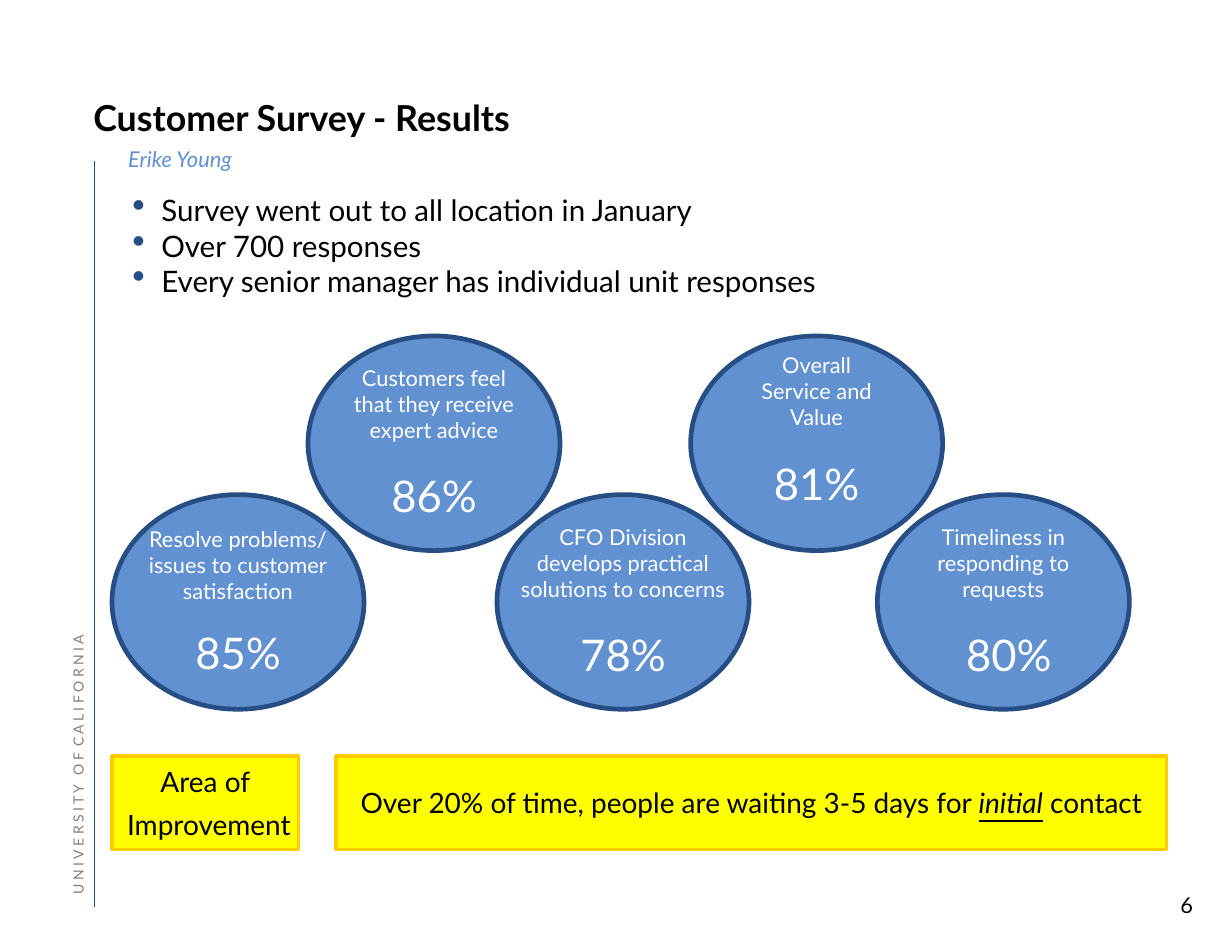
from lxml import etree
from pptx import Presentation
from pptx import util as u
from pptx.dml.color import RGBColor
from pptx.enum import shapes, text
from pptx.oxml.ns import qn

COLORS = {"blue": "6191D1", "navy": "264E84", "yellow": "FFFF00", "gold": "FFCC00",
          "gray": "808080", "black": "000000", "white": "FFFFFF"}
UNIT = 1 / 12  # the grid has twelve columns and rows to the inch
LEFT, CENTER, RIGHT = text.PP_ALIGN.LEFT, text.PP_ALIGN.CENTER, text.PP_ALIGN.RIGHT
TOP, MIDDLE, BOTTOM = text.MSO_ANCHOR.TOP, text.MSO_ANCHOR.MIDDLE, text.MSO_ANCHOR.BOTTOM


def grid(value):
    return u.Inches(value * UNIT)


def color(name):
    return RGBColor.from_string(COLORS[name])


class SlideBuilder:
    font_name = "Lato"
    inset = 0.05

    def __init__(self, slide):
        self.slide = slide

    def frame(self, shape, anchor=TOP, insets=None, wrap=True, grow=False):
        frame = shape.text_frame
        frame.word_wrap = wrap
        frame.vertical_anchor = anchor
        frame.auto_size = (text.MSO_AUTO_SIZE.SHAPE_TO_FIT_TEXT if grow
                           else text.MSO_AUTO_SIZE.NONE)
        if insets is not None:
            for side, value in zip(("left", "top", "right", "bottom"), insets):
                setattr(frame, f"margin_{side}", u.Inches(value))
        return frame

    def paragraph(self, frame, runs, size, ink="black", bullet=False,
                  line_spacing=None, space_before=None, align=LEFT):
        """Add one paragraph; runs are (words, font values, tracking)."""
        first = frame.paragraphs[0]
        paragraph = first if not first.runs else frame.add_paragraph()
        if bullet:
            self.bullet(paragraph)
        formats = {"alignment": align, "space_before": space_before,
                   "line_spacing": line_spacing}
        for name, value in formats.items():
            if value is not None:
                setattr(paragraph, name, value)
        if isinstance(runs, str):
            runs = [(runs, {}, 0)]
        for words, extra, tracking in runs:
            run = paragraph.add_run()
            run.text = words
            values = {"name": self.font_name, "size": u.Pt(size), **extra}
            for name, value in values.items():
                setattr(run.font, name, value)
            run.font.color.rgb = color(ink)
            if tracking:
                run.font._element.set("spc", str(tracking))

    def bullet(self, paragraph):
        properties = paragraph._p.get_or_add_pPr()
        properties.set("marL", str(u.Inches(0.26)))
        properties.set("indent", str(-u.Inches(0.26)))
        bullet_color = etree.SubElement(properties, qn("a:buClr"))
        etree.SubElement(bullet_color, qn("a:srgbClr"), val=COLORS["navy"])
        etree.SubElement(properties, qn("a:buSzPct"), val="125000")
        etree.SubElement(properties, qn("a:buChar"), char="•")

    def text_box(self, place, paragraphs, size, rotation=0, anchor=TOP,
                 insets=None, wrap=True, grow=False, **formats):
        shape = self.slide.shapes.add_textbox(*map(grid, place))
        shape.rotation = rotation
        frame = self.frame(shape, anchor, insets, wrap, grow)
        for runs in paragraphs:
            self.paragraph(frame, runs, size, **formats)

    def panel(self, kind, place, fill, line, width, wrap=True, bottom=inset):
        shape = self.slide.shapes.add_shape(kind, *map(grid, place))
        shape.shadow.inherit = False
        shape.fill.solid()
        shape.fill.fore_color.rgb = color(fill)
        shape.line.color.rgb = color(line)
        shape.line.width = u.Pt(width)
        insets = (self.inset, self.inset, self.inset, bottom)
        return self.frame(shape, MIDDLE, insets, wrap)

    def score(self, column, row, lines, percent, gap=16.8, bottom=inset):
        frame = self.panel(shapes.MSO_SHAPE.OVAL, (column, row, 27, 23),
                           "blue", "navy", 3, wrap=False, bottom=bottom)
        for line in lines:
            self.paragraph(frame, line, 14, "white", align=CENTER)
        self.paragraph(frame, percent, 28, "white", align=CENTER,
                       space_before=u.Pt(gap))

    def callout(self, column, width, paragraphs):
        frame = self.panel(shapes.MSO_SHAPE.RECTANGLE, (column, 81, width, 10),
                           "yellow", "gold", 2)
        for index, runs in enumerate(paragraphs):
            self.paragraph(frame, runs, 18, align=CENTER,
                           space_before=u.Pt(6) if index else None)

    def rule(self, column, top, bottom):
        line = self.slide.shapes.add_connector(
            shapes.MSO_CONNECTOR.STRAIGHT,
            *map(grid, (column, top, column, bottom)))
        line.line.color.rgb = color("navy")
        line.line.width = u.Pt(0.35)
        etree.SubElement(line._element.spPr, qn("a:effectLst"))


def main():
    presentation = Presentation()
    presentation.slide_width = u.Inches(11)
    presentation.slide_height = u.Inches(8.5)
    builder = SlideBuilder(presentation.slides.add_slide(presentation.slide_layouts[6]))
    flush = (0, 0, 0, 0)

    # Side rule, page number and university name
    builder.rule(10.1, 17.3, 97.2)
    builder.text_box((123, 95, 6, 4), ["6"], 14, grow=True, align=RIGHT)
    university = [(" ".join("UNIVERSITY"), {}, 0), (" ", {}, 350),
                  (" ".join("OF"), {}, 0), (" ", {}, 175),
                  (" ".join("CALIFORNIA"), {}, 0)]
    builder.text_box((-17.65, 68.9, 52, 1.8), [university], 9, rotation=270,
                     anchor=BOTTOM, insets=flush, wrap=False, ink="gray",
                     line_spacing=u.Pt(12))

    # Title and presenter
    builder.text_box((10, 11, 57, 3.85), [[("Customer Survey - Results", {"bold": True}, 0)]],
                     23, anchor=BOTTOM, insets=flush, line_spacing=u.Pt(27.9))
    builder.text_box((12, 15, 14.6, 4.1), [[("Erike Young", {"italic": True}, 0)]],
                     14, wrap=False, grow=True, ink="blue", align=CENTER)

    # Survey scores in two staggered rows
    upper, lower = 36, 53
    builder.score(12, lower, ["Resolve problems/", "issues to customer", "satisfaction"],
                  "85%", gap=14)
    builder.score(33, upper, ["Customers feel", "that they receive", "expert advice"], "86%")
    builder.score(53.25, lower, ["CFO Division", "develops practical",
                                 "solutions to concerns"], "78%")
    builder.score(94, lower, ["Timeliness in", "responding to", "requests"], " 80%")
    builder.score(74, upper, ["Overall", "Service and", "Value"], "81%", bottom=0.28)

    # Area of improvement
    builder.callout(12, 20, ["Area of", " Improvement"])
    builder.callout(36, 89, [[
        ("Over 20% of time, people are waiting 3-5 days for ", {}, 0),
        ("initial", {"italic": True, "underline": True}, 0),
        (" contact", {}, 0)]])

    # Survey facts
    builder.text_box((13, 20, 103, 13), [
        "Survey went out to all location in January",
        "Over 700 responses",
        "Every senior manager has individual unit responses"], 19, bullet=True)

    presentation.save("out.pptx")


if __name__ == "__main__":
    main()
